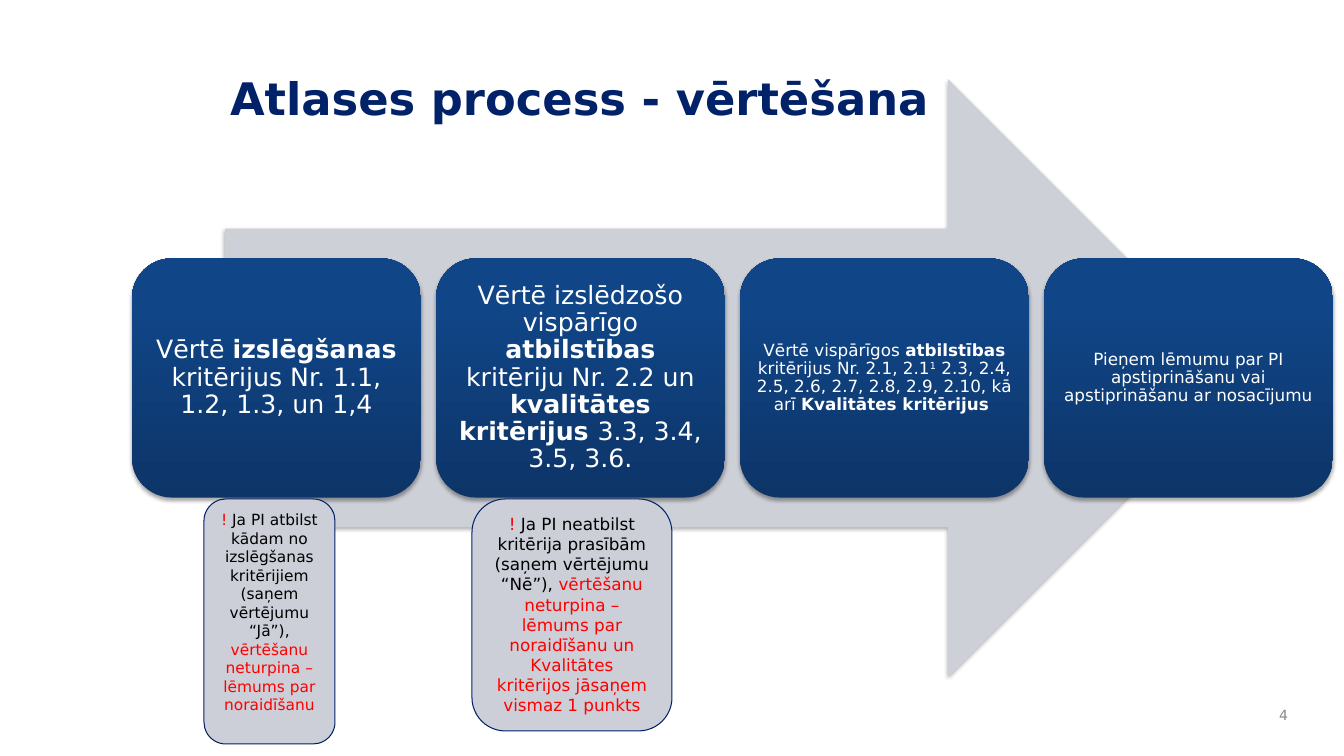
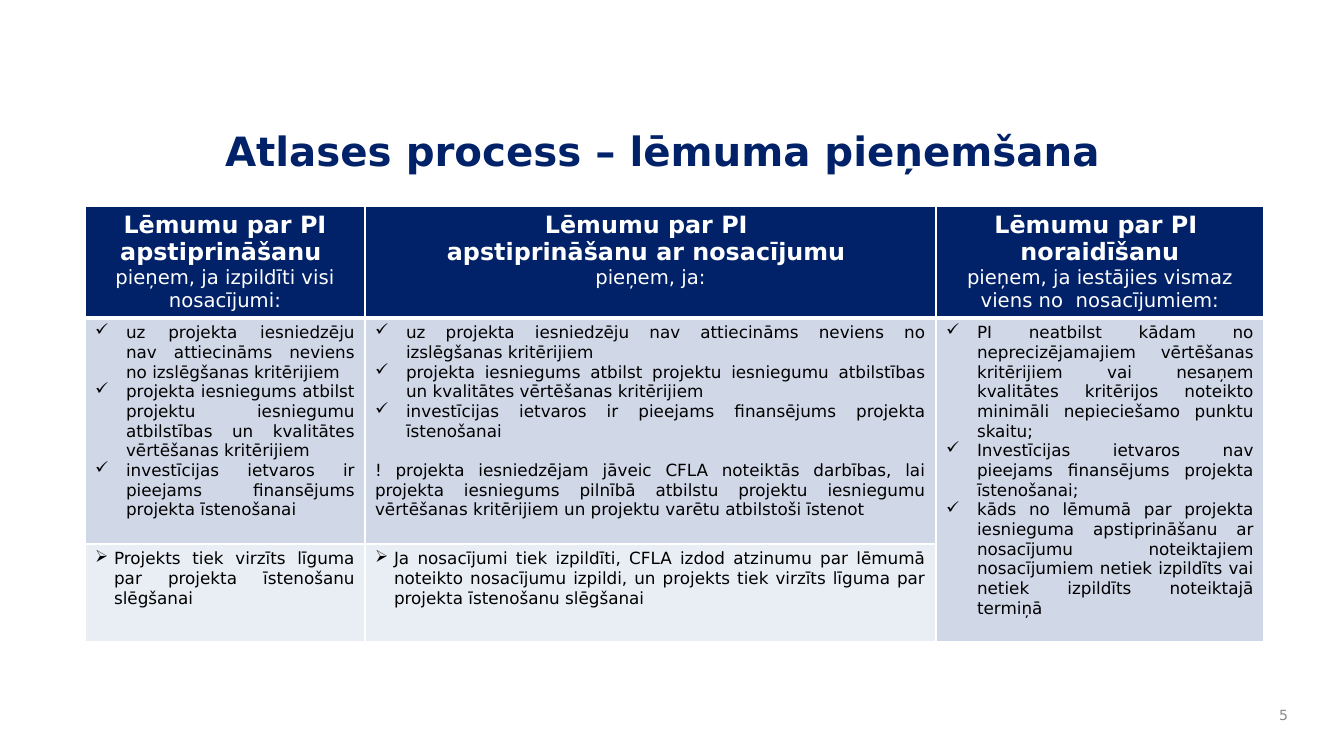
import copy
import lxml.etree
import pptx
import pptx.dml.color
import pptx.enum.shapes
import pptx.enum.text
import pptx.oxml.ns
import pptx.util

RGB = pptx.dml.color.RGBColor
ALIGN = pptx.enum.text.PP_ALIGN
ANCHOR = pptx.enum.text.MSO_ANCHOR
SHAPE = pptx.enum.shapes.MSO_SHAPE
qn = pptx.oxml.ns.qn

NAVY = RGB(0x01, 0x22, 0x69)
WHITE = RGB(0xFF, 0xFF, 0xFF)
BLACK = RGB(0, 0, 0)
RED = RGB(0xFF, 0, 0)
GREY = RGB(0x89, 0x89, 0x89)
ARROW = RGB(0xCD, 0xD0, 0xD7)
NOTE = RGB(0xCC, 0xCF, 0xD7)
BODY = RGB(0xD0, 0xD8, 0xE8)
PALE = RGB(0xE9, 0xED, 0xF4)
BLEND = [(0, RGB(0x0D, 0x35, 0x68)), (0.8, RGB(0x10, 0x45, 0x87)),
         (1, RGB(0x0E, 0x45, 0x8A))]
FONT = "DejaVu Sans"
SCALE = 914400 / 100.8
TICK, POINT = ("✓", 31), ("➢", 19)

CARDS = [
    (18, 7, [("Vērtē ", ""), ("izslēgšanas", "b"),
             (" kritērijus Nr. 1.1, 1.2, 1.3, un 1,4", "")]),
    (18, 7, [("Vērtē izslēdzošo vispārīgo ", ""), ("atbilstības", "b"),
             (" kritēriju Nr. 2.2 un ", ""), ("kvalitātes kritērijus ", "b"),
             ("3.3, 3.4, 3.5, 3.6.", "")]),
    (12, 5, [("Vērtē vispārīgos ", ""), ("atbilstības", "b"),
             (" kritērijus Nr. 2.1, 2.1", ""), ("1", "s"),
             (" 2.3, 2.4, 2.5, 2.6, 2.7, 2.8, 2.9, 2.10, kā arī ", ""),
             ("Kvalitātes kritērijus ", "b")]),
    (12, 5, [("Pieņem lēmumu par PI apstiprināšanu vai "
              "apstiprināšanu ar nosacījumu", "")]),
]
NOTES = [
    ((204, 499, 131, 245), 11,
     [("! ", "r"),
      ("Ja PI atbilst kādam no izslēgšanas kritērijiem (saņem vērtējumu “Jā”), ", ""),
      ("vērtēšanu neturpina – lēmums par noraidīšanu", "r")]),
    ((472, 499, 200, 232), 12,
     [("! ", "r"),
      ("Ja PI neatbilst kritērija prasībām (saņem vērtējumu “Nē”), ", ""),
      ("vērtēšanu neturpina – lēmums par noraidīšanu un "
       "Kvalitātes kritērijos jāsaņem vismaz 1 punkts", "r")]),
]
HEADS = [
    (["Lēmumu par PI apstiprināšanu "], "pieņem, ja izpildīti visi nosacījumi:"),
    (["Lēmumu par PI ", "apstiprināšanu ar nosacījumu "], "pieņem, ja:"),
    (["Lēmumu par PI ", "noraidīšanu"],
     "pieņem, ja iestājies vismaz viens no  nosacījumiem:"),
]
TERMS = [
    "uz projekta iesniedzēju nav attiecināms neviens no izslēgšanas kritērijiem ",
    "projekta iesniegums atbilst projektu iesniegumu atbilstības un "
    "kvalitātes vērtēšanas kritērijiem",
    "investīcijas ietvaros ir pieejams finansējums projekta īstenošanai",
]
DUTY = ("! projekta iesniedzējam jāveic CFLA noteiktās darbības, lai projekta "
        "iesniegums pilnībā atbilstu projektu iesniegumu vērtēšanas kritērijiem "
        "un projektu varētu atbilstoši īstenot")
FAULTS = [
    "PI neatbilst kādam no neprecizējamajiem vērtēšanas kritērijiem vai nesaņem "
    "kvalitātes kritērijos noteikto minimāli nepieciešamo punktu skaitu;",
    "Investīcijas ietvaros nav pieejams finansējums projekta īstenošanai;",
    "kāds no lēmumā par projekta iesnieguma apstiprināšanu ar nosacījumu "
    "noteiktajiem nosacījumiem netiek izpildīts vai netiek izpildīts "
    "noteiktajā termiņā",
]
STEPS = [
    "Projekts tiek virzīts līguma par projekta īstenošanu slēgšanai",
    "Ja nosacījumi tiek izpildīti, CFLA izdod atzinumu par lēmumā noteikto "
    "nosacījumu izpildi, un projekts tiek virzīts līguma par projekta "
    "īstenošanu slēgšanai",
]


def px(n):
    return pptx.util.Emu(round(n * SCALE))


def node(root, tag, **attrs):
    return lxml.etree.SubElement(root, qn(tag), attrs)


def style(font, size, color, bold=False):
    font.name = FONT
    font.size = pptx.util.Pt(size)
    font.bold = bold
    font.color.rgb = color


def write(para, bits, size, color, align=ALIGN.CENTER):
    para.alignment = align
    for text, mark in bits:
        run = para.add_run()
        run.text = text
        style(run.font, size, RED if mark == "r" else color, mark == "b")
        if mark == "s":
            run._r.get_or_add_rPr().set("baseline", "30000")


def setup(frame, anchor, side=10, edge=5):
    frame.word_wrap = True
    frame.auto_size = pptx.enum.text.MSO_AUTO_SIZE.NONE
    frame.vertical_anchor = anchor
    frame.margin_left = frame.margin_right = px(side)
    frame.margin_top = frame.margin_bottom = px(edge)
    return frame.paragraphs[0]


def start(deck, text, box, size):
    slide = deck.slides.add_slide(deck.slide_layouts[5])
    title = slide.shapes.title
    title.left, title.top, title.width, title.height = map(px, box)
    para = setup(title.text_frame, ANCHOR.TOP)
    write(para, [(text, "b")], size, NAVY, ALIGN.LEFT)
    return slide


def number(slide, value):
    box = slide.shapes.add_textbox(*map(px, (1254, 698, 44, 33)))
    para = setup(box.text_frame, ANCHOR.MIDDLE)
    write(para, [(str(value), "")], 10, GREY, ALIGN.RIGHT)


def block(slide, kind, box, fill=None, shade=False):
    shape = slide.shapes.add_shape(kind, *map(px, box))
    shape.line.fill.background()
    if fill is not None:
        shape.fill.solid()
        shape.fill.fore_color.rgb = fill
    shape.shadow.inherit = False
    if shade:
        root = shape._element.spPr.find(qn("a:effectLst"))
        cast = node(root, "a:outerShdw", blurRad="39370", dist="22860",
                    dir="5400000", rotWithShape="0")
        node(node(cast, "a:srgbClr", val="000000"), "a:alpha", val="35000")
    return shape


def card(slide, box, size, inset, bits):
    shape = block(slide, SHAPE.ROUNDED_RECTANGLE, box, shade=True)
    shape.fill.gradient()
    shape.fill.gradient_angle = 90
    stops = shape._element.spPr.find(".//" + qn("a:gsLst"))
    stops.append(copy.deepcopy(stops[-1]))
    for stop, (place, color) in zip(shape.fill.gradient_stops, BLEND):
        stop.position = place
        stop.color.rgb = color
    para = setup(shape.text_frame, ANCHOR.MIDDLE, inset, inset)
    para.line_spacing = 0.9
    write(para, bits, size, WHITE)


def note(slide, box, size, bits):
    shape = block(slide, SHAPE.ROUNDED_RECTANGLE, box, NOTE)
    shape.line.color.rgb = NAVY
    shape.line.width = pptx.util.Pt(0.75)
    write(setup(shape.text_frame, ANCHOR.TOP), bits, size, BLACK)


def flow(slide, box):
    left, top, width, height = box
    block(slide, SHAPE.RIGHT_ARROW, (left + 93, top, 1022, height), ARROW, True)
    gap = 15
    wide = (width - gap * (len(CARDS) - 1)) / len(CARDS)
    tall = height * 0.4
    for i, (size, inset, bits) in enumerate(CARDS):
        spot = (left + i * (wide + gap), top + (height - tall) / 2, wide, tall)
        card(slide, spot, size, inset, bits)
    for spot, size, bits in NOTES:
        note(slide, spot, size, bits)


def paint(cell, fill, over, under):
    props = cell._tc.get_or_add_tcPr()
    for side, width in zip("LRTB", (1, 1, over, under)):
        line = node(props, "a:ln" + side, w=str(width * 12700))
        node(node(line, "a:solidFill"), "a:srgbClr", val=str(WHITE))
    cell.fill.solid()
    cell.fill.fore_color.rgb = fill


def paras(cell):
    frame = cell.text_frame
    yield frame.paragraphs[0]
    while True:
        yield frame.add_paragraph()


def points(cell, texts, bullet):
    sign, dent = bullet
    lines = paras(cell)
    for text in texts:
        para = next(lines)
        props = para._p.get_or_add_pPr()
        props.set("marL", str(px(dent)))
        props.set("indent", str(-px(dent)))
        node(props, "a:buChar", char=sign)
        write(para, [(text, "")], 12, BLACK, ALIGN.JUSTIFY)


def head(cell, names, rule):
    lines = paras(cell)
    for name in names:
        write(next(lines), [(name, "b")], 17, WHITE)
    write(next(lines), [(rule, "")], 14, WHITE)


def grid(slide, left, top, cols, rows):
    frame = slide.shapes.add_table(len(rows), len(cols), px(left), px(top),
                                   px(sum(cols)), px(sum(rows)))
    table = frame.table
    table.horz_banding = False
    for col, width in zip(table.columns, cols):
        col.width = px(width)
    looks = [(NAVY, 1, 3), (BODY, 3, 1), (PALE, 1, 1)]
    for r, (row, tall) in enumerate(zip(table.rows, rows)):
        row.height = px(tall)
        for cell in row.cells:
            paint(cell, *looks[r])
    table.cell(1, 2).merge(table.cell(2, 2))
    for c, (names, rule) in enumerate(HEADS):
        head(table.cell(0, c), names, rule)
    for c, texts in enumerate((TERMS, TERMS, FAULTS)):
        points(table.cell(1, c), texts, TICK)
    for c, text in enumerate(STEPS):
        points(table.cell(2, c), [text], POINT)
    para = table.cell(1, 1).text_frame.add_paragraph()
    para.space_before = pptx.util.Pt(14)
    write(para, [(DUTY, "")], 12, BLACK, ALIGN.JUSTIFY)


def main():
    deck = pptx.Presentation()
    deck.slide_width, deck.slide_height = px(1344), px(756)
    slide = start(deck, "Atlases process - vērtēšana", (220, 66, 972, 86), 32)
    flow(slide, (132, 79, 1201, 598))
    number(slide, 4)
    slide = start(deck, "Atlases process – lēmuma pieņemšana",
                  (215, 121, 972, 86), 28.8)
    grid(slide, 85, 206, (280, 571, 328), (112, 226, 98))
    number(slide, 5)
    deck.save("out.pptx")


if __name__ == "__main__":
    main()
